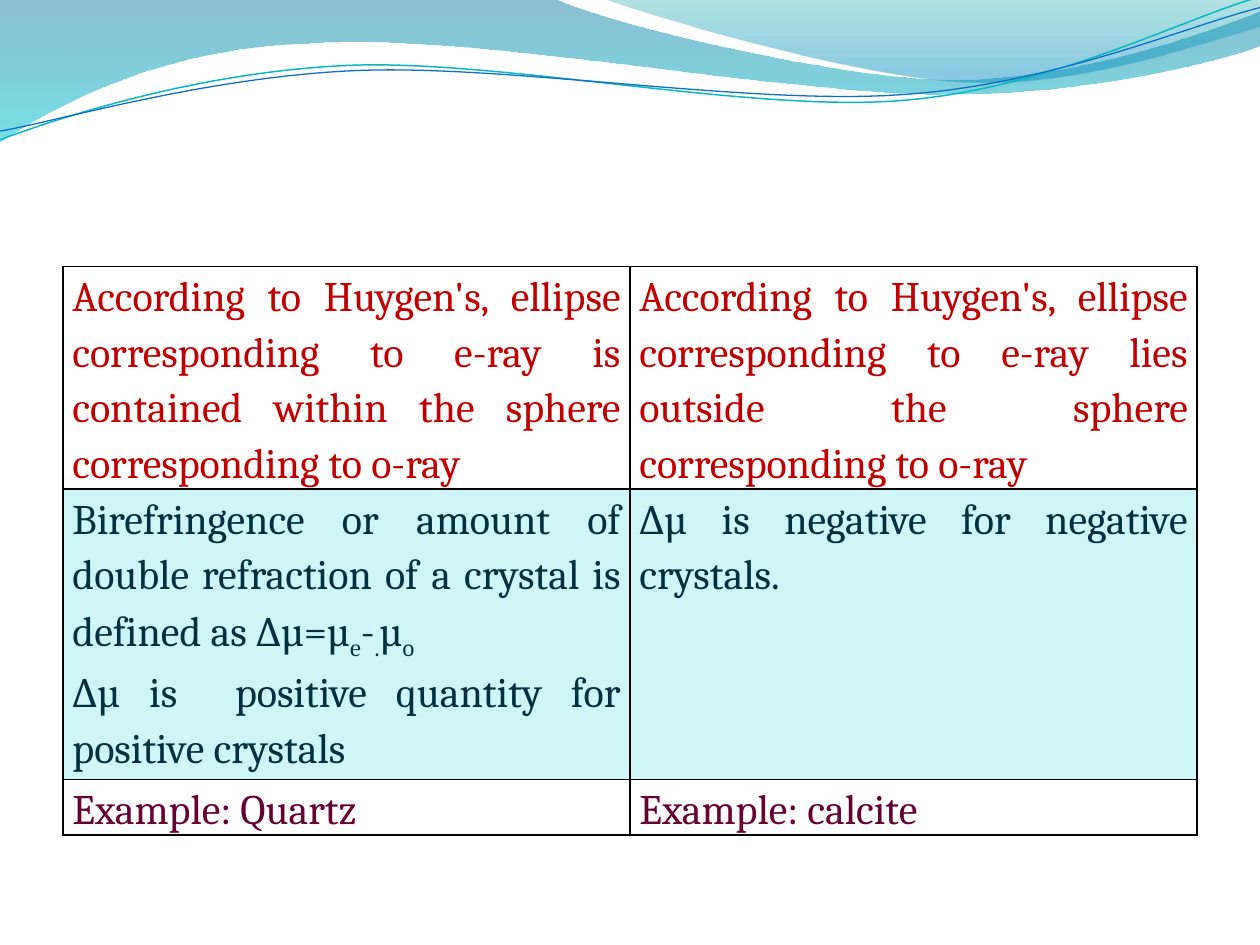
import pptx
import pptx.dml.color
import pptx.enum.text
import pptx.oxml
import pptx.oxml.ns
import pptx.util
from lxml import etree

Pt = pptx.util.Pt
RGBColor = pptx.dml.color.RGBColor
qn = pptx.oxml.ns.qn

RED = RGBColor(0xC0, 0x00, 0x00)
DARK_TEAL = RGBColor(0x02, 0x30, 0x3E)
PLUM = RGBColor(0x66, 0x00, 0x33)
AQUA = RGBColor(0x0B, 0xD0, 0xD9)
LINE_TEAL = RGBColor(0x0A, 0xB8, 0xBF)
LINE_BLUE = RGBColor(0x0F, 0x6F, 0xC6)
WAVE_TOP = RGBColor(0x00, 0x74, 0xA1)
WAVE_BOTTOM = RGBColor(0x00, 0xC6, 0xCF)
CREST_TOP = RGBColor(0x00, 0xA1, 0xA9)
CREST_BOTTOM = RGBColor(0x00, 0x8B, 0xBF)


def add_curve(shapes, start, segments, closed):
    """Draw points and Bezier triples, given in points, as one freeform."""
    nodes = [segment[i:i + 2] for segment in segments for i in range(0, len(segment), 2)]
    builder = shapes.build_freeform(Pt(start[0]), Pt(start[1]), scale=1.0)
    builder.add_line_segments([(Pt(x), Pt(y)) for x, y in nodes], close=closed)
    shape = builder.convert_to_shape()
    shape.shadow.inherit = False
    # Turn each run of three nodes that forms a Bezier into one curve
    lines = iter(list(shape._element.iter(qn("a:lnTo"))))
    for segment in segments:
        group = [next(lines) for _ in range(len(segment) // 2)]
        if len(group) == 3:
            curve = etree.Element(qn("a:cubicBezTo"))
            group[0].addprevious(curve)
            for line in group:
                curve.append(line[0])
                line.getparent().remove(line)
    return shape


def set_alpha(fill_element, percent):
    """Make the colour in a fill or gradient stop partly transparent."""
    color = fill_element.find(qn("a:srgbClr"))
    etree.SubElement(color, qn("a:alpha"), val=str(percent * 1000))


deck = pptx.Presentation()
deck.slide_width, deck.slide_height = Pt(720), Pt(540)
page = deck.slides.add_slide(deck.slide_layouts[6])

# Gradient waves: start, segments, stops of (position, colour, opacity)
waves = [
    ((0, -0.7),
     [(316.8, -0.7), (342.7, 12.2, 478.1, 45.4, 545.8, 45.4),
      (614.2, 45.4, 689.8, 18.7, 720, 6.5), (720.7, 25.9),
      (707.8, 31.7, 626.4, 54.7, 537.1, 54), (447.8, 54, 275, 20.2, 185, 24.5),
      (92.9, 25.9, 33.1, 59.8, -0.7, 81.4), (0, -0.7)],
     [(0, WAVE_TOP, 45), (1, WAVE_BOTTOM, 55)]),
    ((344.9, -0.7),
     [(366.5, 7.9, 491, 44.6, 553.7, 46.8), (616.3, 49.7, 691.9, 23, 720, 15.1),
      (720, 0), (344.9, -0.7)],
     [(0, CREST_TOP, 30), (0.8, CREST_BOTTOM, 45)]),
]
for start, segments, stops in waves:
    wave = add_curve(page.shapes, start, segments, True)
    wave.line.fill.background()
    wave.fill.gradient()
    wave.fill.gradient_angle = 270
    stop_elements = list(wave._element.spPr.iter(qn("a:gs")))
    for stop, element, (position, color, opacity) in zip(
            wave.fill.gradient_stops, stop_elements, stops):
        stop.position = position
        stop.color.rgb = color
        set_alpha(element, opacity)

# Thin wave lines
wave_lines = [
    ((0, 79.9), [(34.6, 67, 113.8, 41, 199.4, 37.4), (284.4, 33.8, 427, 64.1, 513.4, 57.6),
                 (599.8, 51.1, 675.4, 10.8, 718.6, -1.4)], LINE_TEAL, 0.85),
    ((0, 74.9), [(33.8, 69.1, 118.1, 43.9, 203.8, 40.3), (290.2, 36.7, 429.8, 60.5, 516.2, 54),
                 (601.9, 48.2, 677.5, 15.1, 720, 4.3)], LINE_BLUE, 0.75),
]
for start, segments, color, width in wave_lines:
    wave_line = add_curve(page.shapes, start, segments, False)
    wave_line.fill.background()
    wave_line.line.color.rgb = color
    wave_line.line.width = Pt(width)

# Comparison table: each cell is a list of paragraphs, each a list of
# (text, is subscript) spans
rows = [
    (127, RED, False, [
        [[("According to Huygen's, ellipse corresponding to e-ray is contained "
           "within the sphere corresponding to o-ray", False)]],
        [[("According to Huygen's, ellipse corresponding to e-ray lies outside "
           "the sphere corresponding to o-ray", False)]]]),
    (166, DARK_TEAL, True, [
        [[("Birefringence or amount of double refraction of a crystal is defined "
           "as ∆µ=µ", False), ("e", True), ("-", False), (".", True),
          ("µ", False), ("o", True)],
         [("∆µ is  positive quantity for positive crystals", False)]],
        [[("∆µ is negative for negative crystals.", False)]]]),
    (31.5, PLUM, False, [
        [[("Example: Quartz", False)]],
        [[("Example: calcite", False)]]]),
]
table_height = sum(row[0] for row in rows)
table = page.shapes.add_table(len(rows), 2, Pt(36), Pt(152.4), Pt(648), Pt(table_height)).table
table.first_row = table.horz_banding = False
for column in table.columns:
    column.width = Pt(324)

for row_index, (height, color, tinted, contents) in enumerate(rows):
    table.rows[row_index].height = Pt(height)
    for column_index, paragraphs in enumerate(contents):
        cell = table.cell(row_index, column_index)
        cell.margin_left = cell.margin_right = Pt(5.4)
        cell.margin_top = cell.margin_bottom = 0

        # Fill and borders
        properties = cell._tc.get_or_add_tcPr()
        if tinted:
            cell.fill.solid()
            cell.fill.fore_color.rgb = AQUA
            set_alpha(properties.find(qn("a:solidFill")), 20)
        else:
            cell.fill.background()
        for position, side in enumerate("LRTB"):
            properties.insert(position, pptx.oxml.parse_xml(
                f'<a:ln{side} {pptx.oxml.ns.nsdecls("a")} w="{Pt(1)}"><a:solidFill>'
                f'<a:srgbClr val="000000"/></a:solidFill></a:ln{side}>'))

        # Text
        frame = cell.text_frame
        for index, spans in enumerate(paragraphs):
            para = frame.add_paragraph() if index else frame.paragraphs[0]
            para.alignment = pptx.enum.text.PP_ALIGN.JUSTIFY
            para.line_spacing = 1.15
            para.font.name = "Cambria"
            para.font.size = Pt(24)
            para.font.color.rgb = color
            for text, subscript in spans:
                span = para.add_run()
                span.text = text
                if subscript:
                    span._r.get_or_add_rPr().set("baseline", "-25000")

deck.save("out.pptx")
